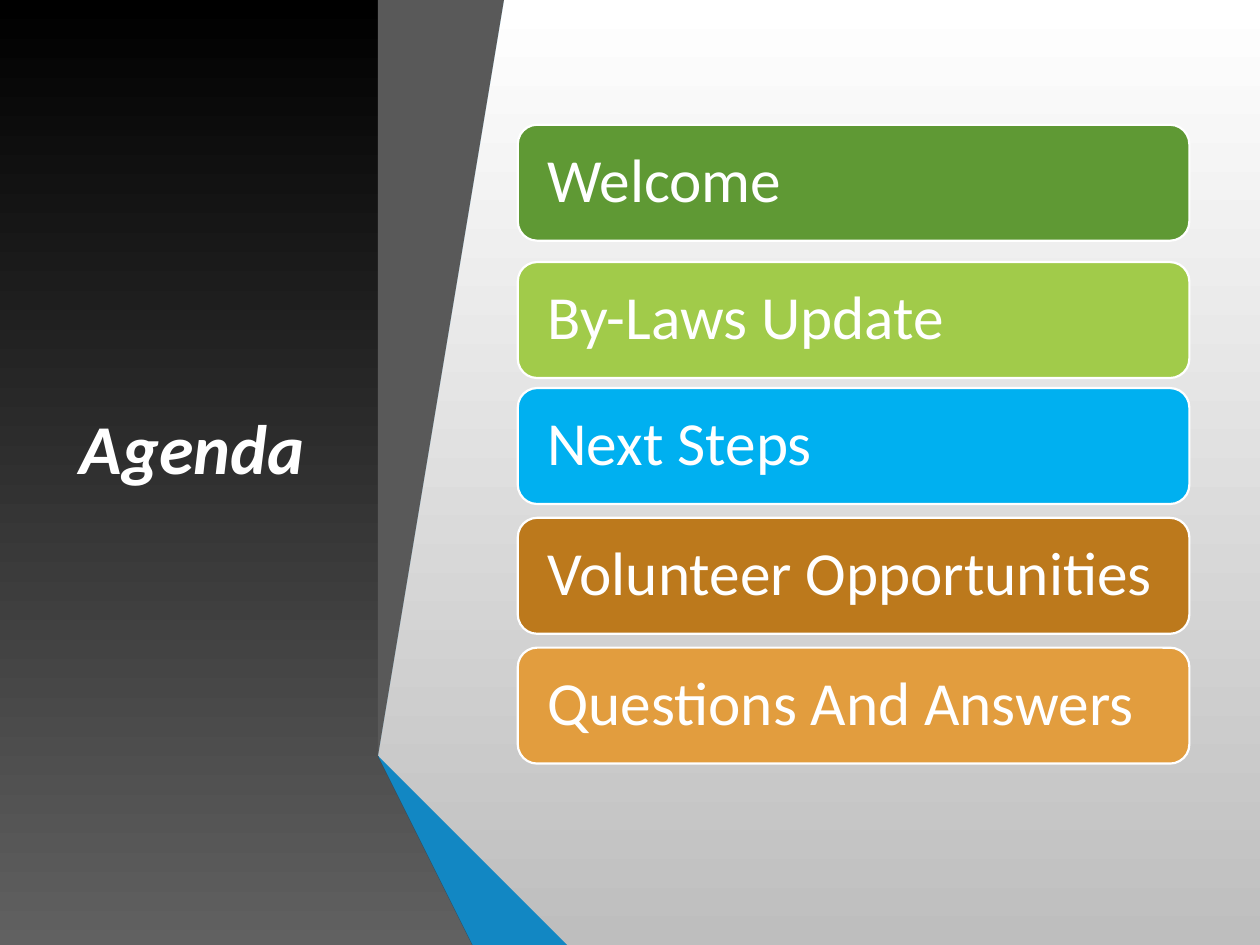
import pptx
import pptx.util
import pptx.dml.color
import pptx.enum.shapes
import pptx.enum.text

WIDTH, HEIGHT = 10, 7.5
FONT = "Calibri"
COLORS = {
    "white": "FFFFFF", "silver": "BEBEBE", "black": "000000", "ash": "676767",
    "blue": "30ACEC", "blue_fold": "1287C3", "blue_edge": "0C5A82",
    "gray": "595959", "gray_fold": "404040", "gray_edge": "262626",
    "green": "5F9934", "lime": "A1CB4A", "sky": "00B0F0",
    "brown": "BC791C", "orange": "E29D3E",
}
PANEL = [(0, 0), (3.36, 0), (2.67, 5.75), (3.61, HEIGHT), (0, HEIGHT)]
RIBBONS = [
    ("blue", [(2.97, 5.78), (3.17, 5.83), (3.89, 0), (3.68, 0)]),
    ("gray", [(3.64, 0), (3.43, 0), (2.72, 5.73), (2.92, 5.77)]),
    ("gray_edge", [(2.72, 5.73), (3.68, HEIGHT), (3.73, HEIGHT)]),
    ("blue_edge", [(2.97, 5.79), (4.15, HEIGHT), (4.2, HEIGHT)]),
    ("blue_fold", [(2.97, 5.79), (4.2, HEIGHT), (4.72, HEIGHT), (3.17, 5.83), (2.97, 5.78)]),
    ("gray_fold", [(4.11, HEIGHT), (2.96, 5.83), (2.92, 5.77), (2.72, 5.73), (3.73, HEIGHT)]),
]
BAR_LEFT, BAR_WIDTH, BAR_HEIGHT, BAR_INSET = 4.11, 5.33, 0.92, 0.19
AGENDA = [
    (0.99, "green", "Welcome"),
    (2.08, "lime", "By-Laws Update"),
    (3.08, "sky", "Next Steps"),
    (4.11, "brown", "Volunteer Opportunities"),
    (5.14, "orange", "Questions And Answers"),
]


def rgb(name):
    return pptx.dml.color.RGBColor.from_string(COLORS[name])


def inches(*lengths):
    return [pptx.util.Inches(length) for length in lengths]


def fill_solid(fill, color):
    fill.solid()
    fill.fore_color.rgb = rgb(color)


def fill_gradient(fill, top, bottom):
    fill.gradient()
    fill.gradient_angle = 270
    for stop, color in zip(fill.gradient_stops, (top, bottom)):
        stop.color.rgb = rgb(color)


def add_shape(slide, kind, box):
    sp = slide.shapes.add_shape(kind, *inches(*box))
    sp.shadow.inherit = False
    sp.line.fill.background()
    return sp


def add_polygon(slide, points):
    builder = slide.shapes.build_freeform(*points[0], scale=pptx.util.Inches(1))
    builder.add_line_segments(points[1:], close=True)
    sp = builder.convert_to_shape()
    sp.shadow.inherit = False
    sp.line.fill.background()
    return sp


def write(sp, text, size, align, bold=None, italic=None):
    tf = sp.text_frame
    tf.word_wrap = True
    tf.vertical_anchor = pptx.enum.text.MSO_ANCHOR.MIDDLE
    p = tf.paragraphs[0]
    p.alignment = align
    r = p.add_run()
    r.text = text
    r.font.name = FONT
    r.font.size = pptx.util.Pt(size)
    r.font.bold, r.font.italic = bold, italic
    r.font.color.rgb = rgb("white")
    return p


def add_agenda_bar(slide, top, color, text):
    rounded = pptx.enum.shapes.MSO_SHAPE.ROUNDED_RECTANGLE
    sp = add_shape(slide, rounded, (BAR_LEFT, top, BAR_WIDTH, BAR_HEIGHT))
    fill_solid(sp.fill, color)
    sp.line.color.rgb = rgb("white")
    sp.line.width = pptx.util.Pt(1.25)
    tf = sp.text_frame
    tf.margin_left, tf.margin_right = inches(BAR_INSET, BAR_INSET)
    p = write(sp, text, 35, pptx.enum.text.PP_ALIGN.LEFT)
    p.line_spacing = 0.9


def main():
    prs = pptx.Presentation()
    prs.slide_width, prs.slide_height = inches(WIDTH, HEIGHT)
    slide = prs.slides.add_slide(prs.slide_layouts[6])
    fill_gradient(slide.background.fill, "white", "silver")
    backdrop = add_shape(slide, pptx.enum.shapes.MSO_SHAPE.RECTANGLE, (0, 0, WIDTH, HEIGHT))
    fill_gradient(backdrop.fill, "white", "silver")
    fill_gradient(add_polygon(slide, PANEL).fill, "black", "ash")
    title = slide.shapes.add_textbox(*inches(0.44, 0.75, 2.17, 5.58))
    write(title, "Agenda", 40, pptx.enum.text.PP_ALIGN.CENTER, bold=True, italic=True)
    for color, points in RIBBONS:
        fill_solid(add_polygon(slide, points).fill, color)
    for top, color, text in AGENDA:
        add_agenda_bar(slide, top, color, text)
    prs.save("out.pptx")


if __name__ == "__main__":
    main()
